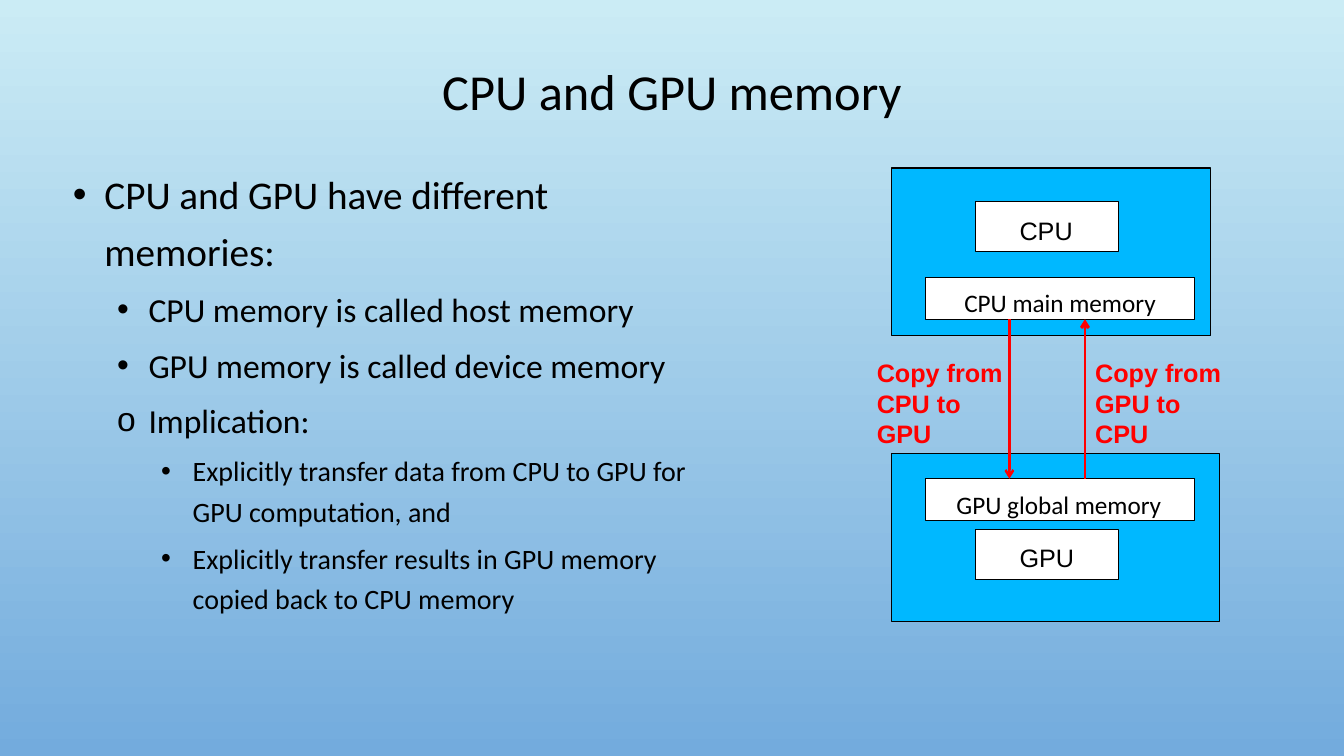
import pptx
import pptx.util
import pptx.dml.color
import pptx.enum.dml
import pptx.enum.shapes
import pptx.enum.text
import pptx.oxml
import pptx.oxml.ns
from lxml import etree

Pt = pptx.util.Pt
RGBColor = pptx.dml.color.RGBColor
qn = pptx.oxml.ns.qn
PP_ALIGN = pptx.enum.text.PP_ALIGN

SKY = RGBColor(0xCB, 0xEC, 0xF5)
DUSK = RGBColor(0x73, 0xAB, 0xDD)
CHIP_BLUE = RGBColor(0x00, 0xB8, 0xFF)
WHITE = RGBColor(0xFF, 0xFF, 0xFF)
BLACK = RGBColor(0x00, 0x00, 0x00)
RED = RGBColor(0xFF, 0x00, 0x00)

deck = pptx.Presentation()
deck.slide_width = Pt(960)
deck.slide_height = Pt(540)
slide = deck.slides.add_slide(deck.slide_layouts[6])

backdrop = slide.background.fill
backdrop.gradient()
backdrop.gradient_angle = 270
for stop, color in zip(backdrop.gradient_stops, (SKY, DUSK)):
    stop.color.rgb = color


def add_text(text, left, top, width, height, font, size, color=BLACK, bold=False, wrap=True):
    box = slide.shapes.add_textbox(Pt(left), Pt(top), Pt(width), Pt(height))
    frame = box.text_frame
    frame.word_wrap = wrap
    frame.text = text
    run = frame.paragraphs[0].runs[0]
    run.font.name = font
    run.font.size = Pt(size)
    run.font.color.rgb = color
    run.font.bold = bold
    return frame


title = add_text("CPU and GPU memory", 72, 23, 816, 88.5, "Calibri", 36)
title.vertical_anchor = pptx.enum.text.MSO_ANCHOR.MIDDLE
title.paragraphs[0].alignment = PP_ALIGN.CENTER
title.paragraphs[0].line_spacing = 0.9

points = [
    (0, "•", "CPU and GPU have different memories:"),
    (1, "•", "CPU memory is called host memory"),
    (1, "•", "GPU memory is called device memory"),
    (1, "o", "Implication:"),
    (2, "•", "Explicitly transfer data from CPU to GPU for GPU computation, and"),
    (2, "•", "Explicitly transfer results in GPU memory copied back to CPU memory"),
]
body = slide.shapes.add_textbox(Pt(45), Pt(111.6), Pt(470), Pt(332.6)).text_frame
body.word_wrap = True
for index, (level, bullet, text) in enumerate(points):
    point = body.paragraphs[0] if index == 0 else body.add_paragraph()
    point.text = text
    point.level = level
    point.line_spacing = 1.2
    point.space_before = Pt(5 if index else 0)
    properties = point._p.get_or_add_pPr()
    properties.set("marL", str(Pt(22.5 + 31.5 * level)))
    properties.set("indent", str(Pt(-22.5)))
    bullet_color = etree.SubElement(properties, qn("a:buClr"))
    etree.SubElement(bullet_color, qn("a:srgbClr"), val=str(BLACK))
    etree.SubElement(properties, qn("a:buFont"), typeface="Arial")
    etree.SubElement(properties, qn("a:buChar"), char=bullet)
    font = point.runs[0].font
    font.name = "Calibri"
    font.size = Pt(28 - 4 * level)
    font.color.rgb = BLACK

blocks = [
    (637, 120, 228, 120, CHIP_BLUE),
    (637, 324, 234, 120, CHIP_BLUE),
    (661, 198, 192, 30, WHITE),
    (661, 342, 192, 30, WHITE),
    (697, 378, 102, 36, WHITE),
    (697, 144, 102, 36, WHITE),
]
for left, top, width, height, color in blocks:
    block = slide.shapes.add_shape(
        pptx.enum.shapes.MSO_SHAPE.RECTANGLE, Pt(left), Pt(top), Pt(width), Pt(height))
    block.shadow.inherit = False
    block.fill.solid()
    block.fill.fore_color.rgb = color
    block.line.color.rgb = BLACK
    block.line.width = Pt(0.75)

for x, start, end, weight in [(721, 228, 342, 1.75), (775, 342, 228, 2)]:
    transfer = slide.shapes.add_connector(
        pptx.enum.shapes.MSO_CONNECTOR.STRAIGHT, Pt(x), Pt(start), Pt(x), Pt(end))
    transfer.line.color.rgb = RED
    transfer.line.width = Pt(weight)
    etree.SubElement(transfer.line._get_or_add_ln(), qn("a:tailEnd"), type="arrow")
    etree.SubElement(transfer._element.spPr, qn("a:effectLst"))

for text, left in [("Copy from CPU to GPU", 619.2), ("Copy from GPU to CPU", 775.2)]:
    add_text(text, left, 252, 108, 64, "Arial", 18, RED, bold=True)

labels = [
    ("GPU", 721.2, 384, 54, "Arial", PP_ALIGN.LEFT),
    ("CPU", 721.2, 150, 52.5, "Arial", PP_ALIGN.LEFT),
    ("CPU main memory", 673.2, 201.6, 168, "Calibri", PP_ALIGN.CENTER),
    ("GPU global memory", 667.4, 345.6, 178, "Calibri", PP_ALIGN.CENTER),
]
for text, left, top, width, font, alignment in labels:
    label = add_text(text, left, top, width, 26, font, 18, wrap=False)
    label.auto_size = pptx.enum.text.MSO_AUTO_SIZE.SHAPE_TO_FIT_TEXT
    label.paragraphs[0].alignment = alignment

deck.save("out.pptx")
